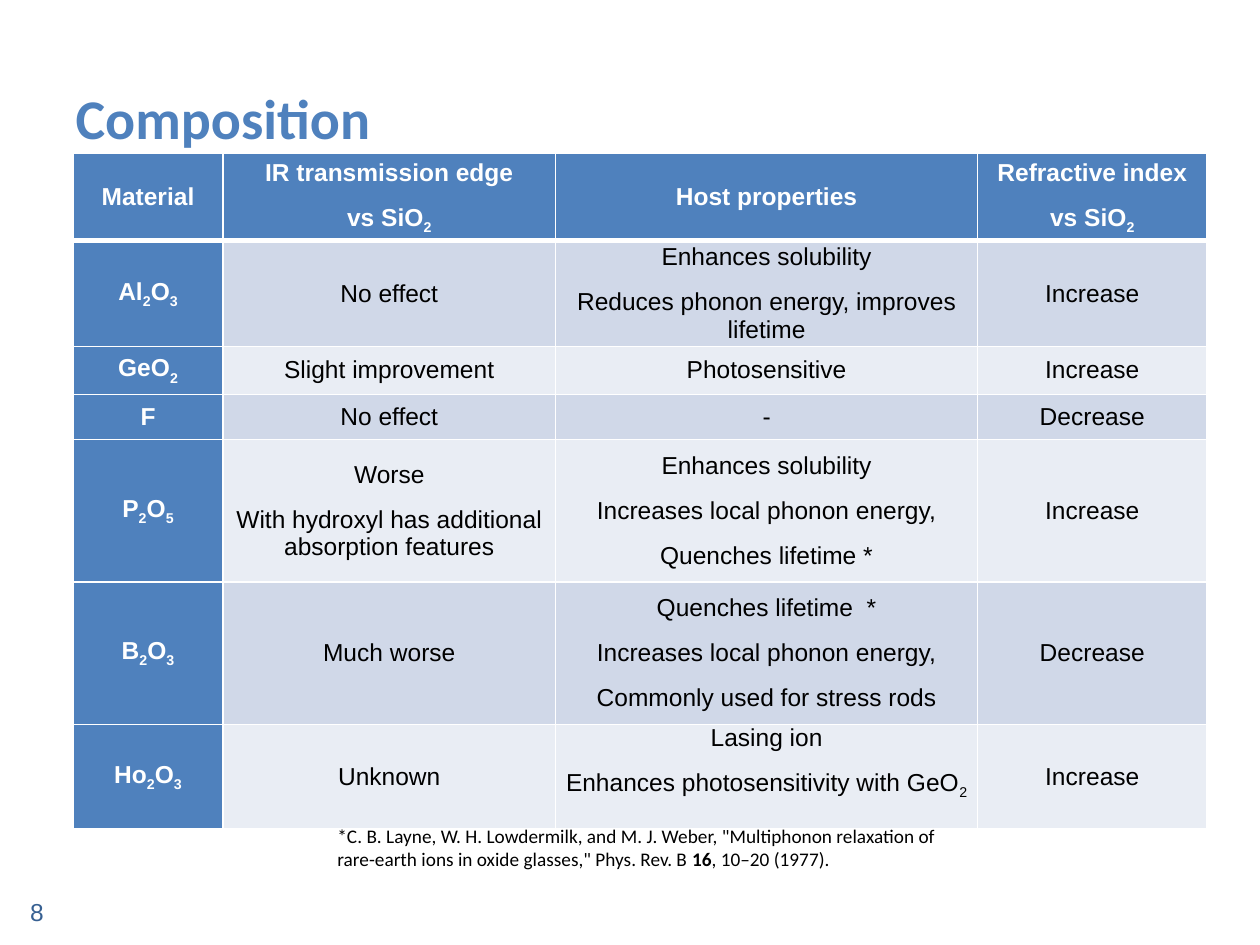
from lxml import etree
from pptx import Presentation
from pptx import util as u
from pptx.dml.color import RGBColor
from pptx.enum import text
from pptx.oxml import ns

BLUE = RGBColor(0x4F, 0x81, 0xBD)
DARK_BLUE = RGBColor(0x37, 0x60, 0x92)
BAND = RGBColor(0xD0, 0xD8, 0xE8)
PALE = RGBColor(0xE9, 0xED, 0xF4)
WHITE = RGBColor(0xFF, 0xFF, 0xFF)
BLACK = RGBColor(0, 0, 0)

# Table text: "|" starts a paragraph, "_" makes the next character a subscript
ROWS = [
    ["Material", "IR transmission edge|vs SiO_2", "Host properties",
     "Refractive index|vs SiO_2"],
    ["Al_2O_3", "No effect",
     "Enhances solubility|Reduces phonon energy, improves lifetime", "Increase"],
    ["GeO_2", "Slight improvement", "Photosensitive", "Increase"],
    ["F", "No effect", "-", "Decrease"],
    ["P_2O_5", "Worse|With hydroxyl has additional absorption features",
     "Enhances solubility|Increases local phonon energy,|Quenches lifetime *",
     "Increase"],
    ["B_2O_3", "Much worse",
     "Quenches lifetime  *|Increases local phonon energy,|Commonly used for stress rods",
     "Decrease"],
    ["Ho_2O_3", "Unknown", "Lasing ion|Enhances photosensitivity with GeO_2",
     "Increase"],
]
COL_WIDTHS = [1.19, 2.64, 3.35, 1.82]
ROW_HEIGHTS = [0.69, 0.79, 0.38, 0.36, 1.13, 1.13, 0.83]


class Deck:
    """Holds the style and the current slide."""
    body_font, head_font = "Arial", "Calibri"
    table_size = 14

    def __init__(self, prs):
        self.s = prs.slides.add_slide(prs.slide_layouts[5])

    def run(self, p, txt, font, size, color, bold=False, sub=False):
        r = p.add_run()
        r.text = txt
        r.font.name, r.font.size, r.font.bold = font, u.Pt(size), bold
        r.font.color.rgb = color
        if sub:
            r._r.get_or_add_rPr().set("baseline", "-25000")

    def title(self, txt, box):
        sp = self.s.shapes.title
        sp.left, sp.top, sp.width, sp.height = map(u.Inches, box)
        tf = sp.text_frame
        tf.vertical_anchor = text.MSO_ANCHOR.TOP
        p = tf.paragraphs[0]
        p.alignment = text.PP_ALIGN.LEFT
        self.run(p, txt, self.head_font, 32, BLUE, True)

    def text_box(self, runs, box, font, size, color):
        tf = self.s.shapes.add_textbox(*map(u.Inches, box)).text_frame
        tf.word_wrap = True
        for txt, bold in runs:
            self.run(tf.paragraphs[0], txt, font, size, color, bold)

    def borders(self, cell, widths):
        tcPr = cell._tc.get_or_add_tcPr()
        for side, pt in widths.items():
            ln = etree.SubElement(tcPr, ns.qn("a:ln" + side), w=str(u.Pt(pt)))
            fill = etree.SubElement(ln, ns.qn("a:solidFill"))
            etree.SubElement(fill, ns.qn("a:srgbClr"), val=str(WHITE))

    def cell(self, cell, txt, fill, color, bold):
        cell.fill.solid()
        cell.fill.fore_color.rgb = fill
        cell.vertical_anchor = text.MSO_ANCHOR.MIDDLE
        cell.margin_left = cell.margin_right = u.Inches(0.07)
        cell.margin_top = cell.margin_bottom = 0
        tf = cell.text_frame
        for i, line in enumerate(txt.split("|")):
            p = tf.add_paragraph() if i else tf.paragraphs[0]
            p.alignment = text.PP_ALIGN.CENTER
            if i:
                p.space_before = u.Pt(10)
            first, *rest = line.split("_")
            parts = [(first, False)]
            for part in rest:
                parts += [(part[0], True), (part[1:], False)]
            for part, sub in parts:
                if part:
                    self.run(p, part, self.body_font, self.table_size,
                             color, bold, sub)

    def table(self, rows, left, top, widths, heights):
        tbl = self.s.shapes.add_table(
            len(rows), len(widths), u.Inches(left), u.Inches(top),
            u.Inches(sum(widths)), u.Inches(sum(heights))).table
        for col, w in zip(tbl.columns, widths):
            col.width = u.Inches(w)
        for row, h in zip(tbl.rows, heights):
            row.height = u.Inches(h)
        for i, row in enumerate(rows):
            for j, txt in enumerate(row):
                head = i == 0 or j == 0
                fill = BLUE if head else BAND if i % 2 else PALE
                c = tbl.cell(i, j)
                # The header sets its own rules; the table style draws the rest
                if i == 0:
                    self.borders(c, {"L": 1, "R": 1, "T": 1, "B": 3})
                self.cell(c, txt, fill, WHITE if head else BLACK, head)
        return tbl


def main():
    prs = Presentation()
    prs.slide_width, prs.slide_height = u.Inches(10), u.Inches(7.5)
    d = Deck(prs)

    # Slide number and title
    d.text_box([("8", False)], (0.14, 7.07, 2.33, 0.4), d.body_font, 14, DARK_BLUE)
    d.title("Composition", (0.5, 0.61, 9, 0.8))

    # Materials table; the last host cell sits at the top of its row
    tbl = d.table(ROWS, 0.58, 1.22, COL_WIDTHS, ROW_HEIGHTS)
    tbl.cell(6, 2).vertical_anchor = text.MSO_ANCHOR.TOP

    # Citation
    d.text_box([
        ("*C. B. Layne, W. H. Lowdermilk, and M. J. Weber, \"Multiphonon relaxation "
         "of rare-earth ions in oxide glasses,\" Phys. Rev. B ", False),
        ("16", True),
        (", 10–20 (1977).", False),
    ], (2.58, 6.49, 5, 0.47), d.head_font, 11, BLACK)

    prs.save("out.pptx")


if __name__ == "__main__":
    main()
